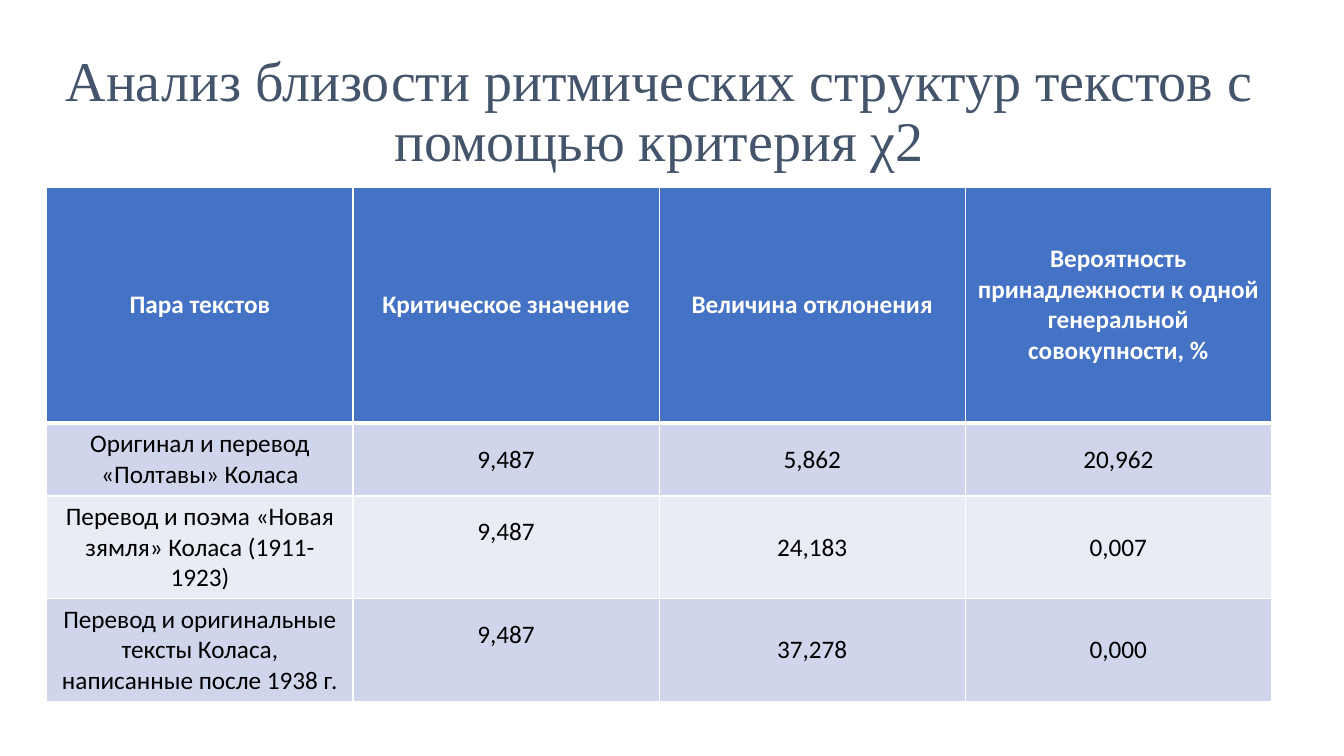
from lxml.etree import SubElement
from pptx import Presentation
from pptx.dml.color import RGBColor
from pptx.enum.text import MSO_ANCHOR, MSO_AUTO_SIZE, PP_ALIGN
from pptx.oxml.ns import qn
from pptx.util import Cm, Pt

TITLE = "Анализ близости ритмических структур текстов с помощью критерия χ2"
ROWS = [
    ("Пара текстов", "Критическое значение", "Величина отклонения",
     "Вероятность принадлежности к одной генеральной совокупности, %"),
    ("Оригинал и перевод «Полтавы» Коласа", "9,487", "5,862", "20,962"),
    ("Перевод и поэма «Новая зямля» Коласа (1911-1923)", "9,487", "24,183", "0,007"),
    ("Перевод и оригинальные тексты Коласа, написанные после 1938 г.",
     "9,487", "37,278", "0,000"),
]
ROW_HEIGHTS = [5.94, 1.85, 2.59, 2.59]
HEADER_FILL = "4472C4"
BAND_FILLS = ["E9EBF5", "CFD5EA"]
RAISED_CELLS = {(2, 1), (3, 1)}


def color(hex_string):
    return RGBColor.from_string(hex_string)


def write_text(text_frame, text, font_name, size, hex_string, bold=False):
    paragraph = text_frame.paragraphs[0]
    paragraph.alignment = PP_ALIGN.CENTER
    run = paragraph.add_run()
    run.text = text
    run.font.name = font_name
    run.font.size = Pt(size)
    run.font.bold = bold
    run.font.color.rgb = color(hex_string)
    return paragraph


def set_borders(cell, hex_string, bottom_width):
    """Draw 1 pt borders, with the given width in points at the bottom."""
    properties = cell._tc.get_or_add_tcPr()
    widths = {"a:lnL": 1, "a:lnR": 1, "a:lnT": 1, "a:lnB": bottom_width}
    for tag, width in widths.items():
        line = SubElement(properties, qn(tag), w=str(Pt(width)))
        fill = SubElement(line, qn("a:solidFill"))
        SubElement(fill, qn("a:srgbClr"), val=hex_string)


def add_title(slide, left, top, width, height):
    title = slide.shapes.title
    title.left, title.top, title.width, title.height = left, top, width, height
    text_frame = title.text_frame
    text_frame.word_wrap = True
    text_frame.auto_size = MSO_AUTO_SIZE.NONE
    text_frame.vertical_anchor = MSO_ANCHOR.MIDDLE
    paragraph = write_text(text_frame, TITLE, "Times New Roman", 40, "44546A")
    paragraph.line_spacing = 0.9


def add_results_table(slide, left, top, width):
    column_count = len(ROWS[0])
    table = slide.shapes.add_table(
        len(ROWS), column_count, left, top, width, Cm(sum(ROW_HEIGHTS))).table
    for column in table.columns:
        column.width = int(width / column_count)
    for row_index, texts in enumerate(ROWS):
        table.rows[row_index].height = Cm(ROW_HEIGHTS[row_index])
        header = row_index == 0
        for column_index, text in enumerate(texts):
            cell = table.cell(row_index, column_index)
            cell.vertical_anchor = MSO_ANCHOR.MIDDLE
            if (row_index, column_index) in RAISED_CELLS:
                cell.margin_bottom = Cm(0.9)
            set_borders(cell, "FFFFFF", 3 if header else 1)
            cell.fill.solid()
            cell.fill.fore_color.rgb = color(
                HEADER_FILL if header else BAND_FILLS[row_index % 2])
            write_text(cell.text_frame, text, "Calibri", 18,
                       "FFFFFF" if header else "000000", header)


def main():
    presentation = Presentation()
    presentation.slide_width = Cm(33.87)
    presentation.slide_height = Cm(19.05)
    slide = presentation.slides.add_slide(presentation.slide_layouts[5])
    add_title(slide, Cm(0.48), Cm(1.02), Cm(32.26), Cm(3.68))
    add_results_table(slide, Cm(1.18), Cm(4.71), Cm(30.86))
    presentation.save("out.pptx")


if __name__ == "__main__":
    main()
